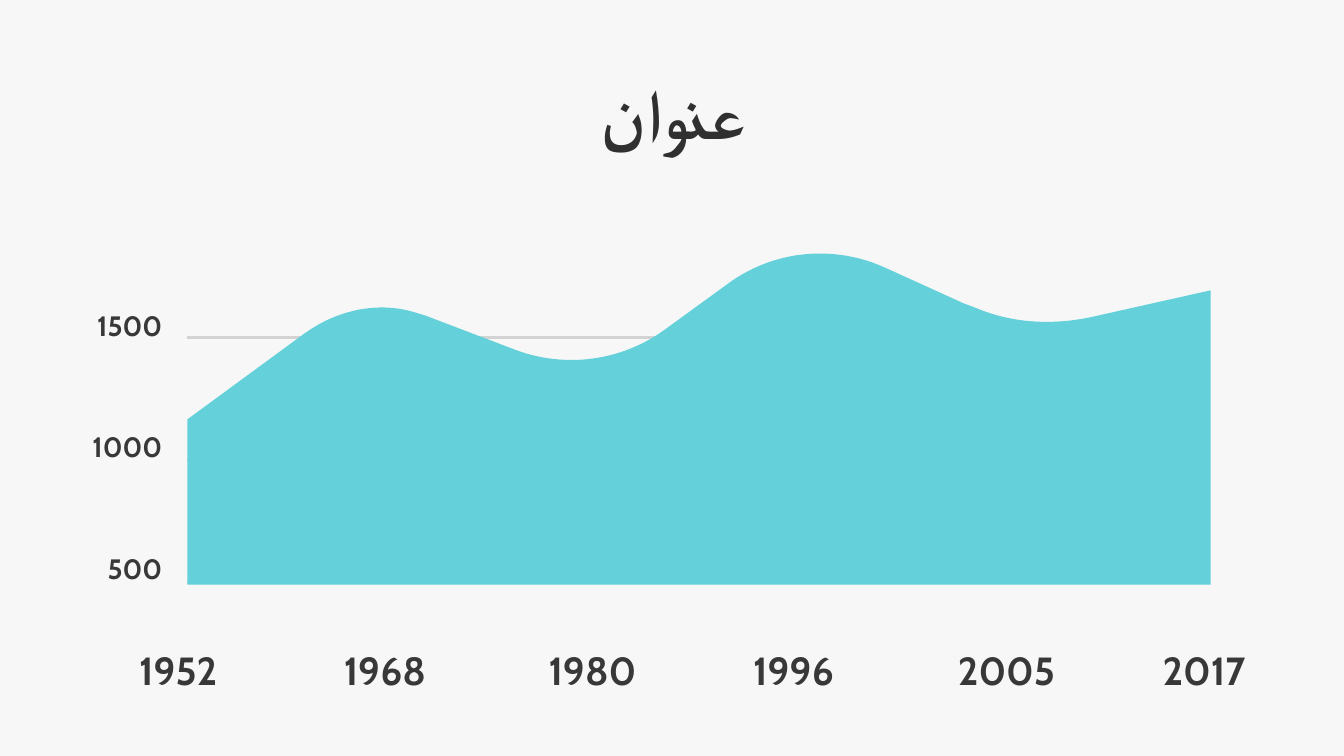
import pptx
import pptx.dml.color
import pptx.enum.shapes
import pptx.enum.text
import pptx.oxml
import pptx.util
from dataclasses import dataclass

Pt = pptx.util.Pt
Align = pptx.enum.text.PP_ALIGN


@dataclass(frozen=True)
class Theme:
    background: str = "F7F7F7"
    area: str = "64D1DA"
    grid: str = "D3D3D3"
    label: str = "383838"
    title: str = "303030"
    label_font: str = "Cabin"
    title_font: str = "Calibri"
    title_size: float = 50
    year_size: float = 28
    value_size: float = 20
    grid_width: float = 1.75


def rgb(value):
    return pptx.dml.color.RGBColor.from_string(value)


def write_text(shape, text, *, size, color, font, align=Align.LEFT, rtl=False):
    frame = shape.text_frame
    frame.word_wrap = True
    frame.auto_size = pptx.enum.text.MSO_AUTO_SIZE.NONE
    frame.vertical_anchor = pptx.enum.text.MSO_ANCHOR.TOP
    frame.margin_left = frame.margin_right = 0
    frame.margin_top = frame.margin_bottom = 0
    paragraph = frame.paragraphs[0]
    paragraph.alignment = align
    if rtl:
        paragraph._p.get_or_add_pPr().set("rtl", "1")
    run = paragraph.add_run()
    run.text = text
    run.font.size = Pt(size)
    run.font.name = font
    run.font.bold = True
    run.font.color.rgb = rgb(color)


def curve_points(start, controls, steps=24):
    """Points along a cubic curve, without its start."""
    points = (start, *controls)
    for step in range(1, steps + 1):
        t = step / steps
        weights = ((1 - t) ** 3, 3 * t * (1 - t) ** 2, 3 * t * t * (1 - t), t ** 3)
        yield tuple(sum(w * p[axis] for w, p in zip(weights, points)) for axis in (0, 1))


class SlideBuilder:
    def __init__(self, slide, theme):
        self.slide = slide
        self.theme = theme
        fill = slide.background.fill
        fill.solid()
        fill.fore_color.rgb = rgb(theme.background)

    def title(self, text, left, top, width, height):
        shape = self.slide.shapes.title
        shape.left, shape.top, shape.width, shape.height = map(Pt, (left, top, width, height))
        write_text(shape, text, size=self.theme.title_size, color=self.theme.title,
                   font=self.theme.title_font, align=Align.CENTER, rtl=True)

    def label(self, text, left, top, width, height, size, align=Align.LEFT):
        shape = self.slide.shapes.add_textbox(*map(Pt, (left, top, width, height)))
        write_text(shape, text, size=size, color=self.theme.label,
                   font=self.theme.label_font, align=align)

    def grid_line(self, left, right, y):
        line = self.slide.shapes.add_connector(
            pptx.enum.shapes.MSO_CONNECTOR.STRAIGHT, Pt(left), Pt(y), Pt(right), Pt(y))
        line.line.color.rgb = rgb(self.theme.grid)
        line.line.width = Pt(self.theme.grid_width)
        pptx.oxml.xmlchemy.OxmlElement  # the element factory used below
        line._element.spPr.append(pptx.oxml.xmlchemy.OxmlElement("a:effectLst"))

    def area(self, start, segments):
        """A segment holds one point for a straight edge, three for a curve."""
        outline = [start]
        for segment in segments:
            if len(segment) == 1:
                outline.append(segment[0])
            else:
                outline.extend(curve_points(outline[-1], segment))
        corners = [(Pt(x), Pt(y)) for x, y in outline]
        builder = self.slide.shapes.build_freeform(*corners[0], scale=1.0)
        builder.add_line_segments(corners[1:], close=True)
        shape = builder.convert_to_shape()
        shape.shadow.inherit = False
        shape.fill.solid()
        shape.fill.fore_color.rgb = rgb(self.theme.area)
        shape.line.fill.background()


# Position and outline of the area, in points
LEFT, RIGHT, BASE = 133.9, 864.7, 417.6
AREA_START = (LEFT, 299.5)
AREA_SEGMENTS = [
    [(217.4, 238.3)],
    [(241.2, 221), (271.4, 214.6), (298.8, 223.9)],
    [(303.8, 225.4)],
    [(367.9, 249.8)],
    [(403.9, 263.5), (445, 257.8), (475.9, 234.7)],
    [(518.4, 203.8)],
    [(551.5, 178.6), (595.4, 174.2), (632.9, 191.5)],
    [(688.3, 216.7)],
    [(696.2, 219.6)],
    [(722.9, 231.1), (752.4, 232.6), (781.2, 226.1)],
    [(RIGHT, 207.4)],
    [(RIGHT, BASE)],
    [(LEFT, BASE)],
]
YEARS = ["1952", "1968", "1980", "1996", "2005", "2017"]
VALUES = ["1500", "1000", "500"]


def main():
    presentation = pptx.Presentation()
    presentation.slide_width, presentation.slide_height = Pt(960), Pt(540)
    theme = Theme()
    builder = SlideBuilder(presentation.slides.add_slide(presentation.slide_layouts[5]), theme)

    # Grid lines and value labels
    for row, value in enumerate(VALUES):
        builder.grid_line(LEFT, 862.6, 241.2 + 87.5 * row)
        builder.label(value, 32.4, 220.3 + 86.8 * row, 83.5, 46.8,
                      theme.value_size, Align.RIGHT)

    # Year labels
    for column, year in enumerate(YEARS):
        builder.label(year, 99.4 + 146.2 * column, 461.5, 78.5, 43.9, theme.year_size)

    # Area and title
    builder.area(AREA_START, AREA_SEGMENTS)
    builder.title("عنوان", 108, 49.7, 746.6, 67.7)

    presentation.save("out.pptx")


if __name__ == "__main__":
    main()
